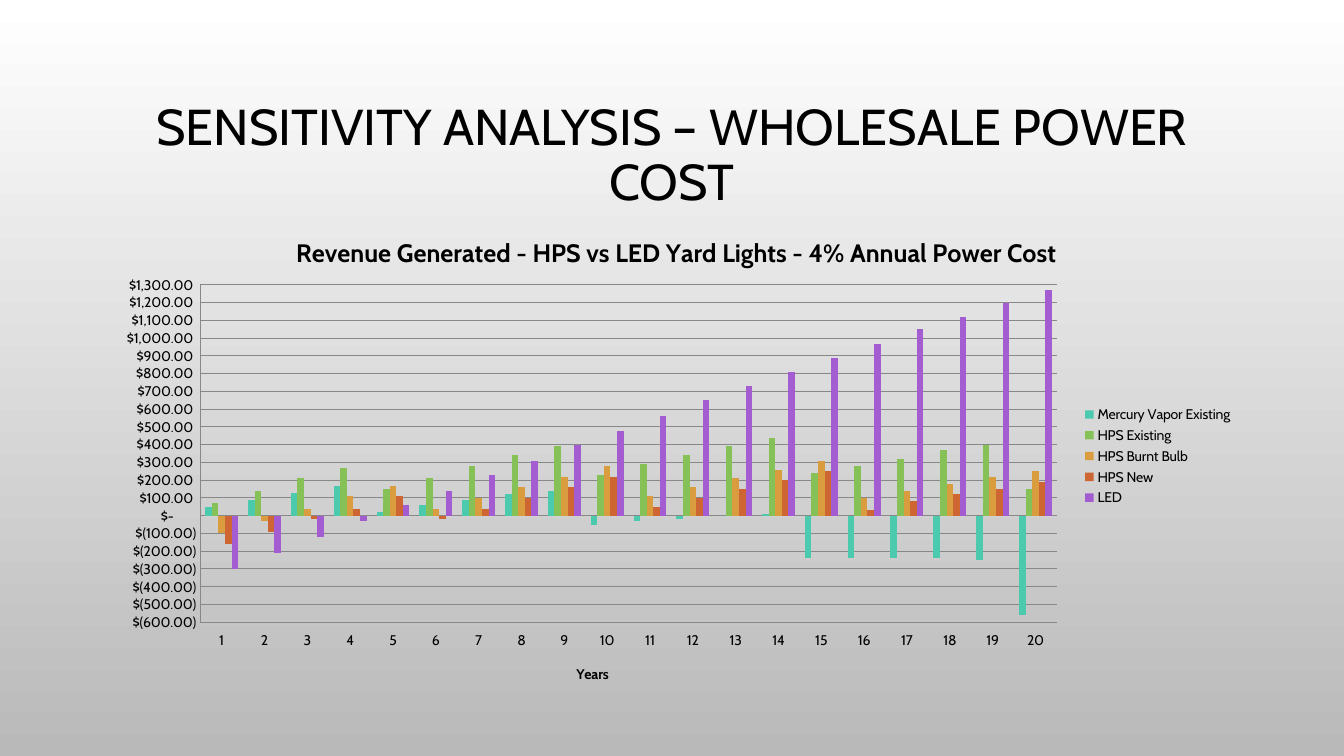
import pptx
import pptx.chart.data
import pptx.dml.color
import pptx.enum.chart
import pptx.enum.text
import pptx.oxml
import pptx.oxml.ns
import pptx.util

HEADING = "SENSITIVITY ANALYSIS – WHOLESALE POWER COST"
CHART_TITLE = "Revenue Generated - HPS vs LED Yard Lights - 4% Annual Power Cost"
YEARS_TITLE = "Years"
YEARS = [str(year) for year in range(1, 21)]
REVENUE = {
    "Mercury Vapor Existing": [50, 90, 130, 170, 20, 60, 90, 120, 140, -50,
                               -30, -20, 0, 10, -240, -240, -240, -240, -250, -560],
    "HPS Existing": [70, 140, 210, 270, 150, 210, 280, 340, 390, 230,
                     290, 340, 390, 440, 240, 280, 320, 370, 400, 150],
    "HPS Burnt Bulb": [-100, -30, 40, 110, 170, 40, 100, 160, 220, 280,
                       110, 160, 210, 260, 310, 100, 140, 180, 220, 250],
    "HPS New": [-160, -90, -20, 40, 110, -20, 40, 100, 160, 220,
                50, 100, 150, 200, 250, 30, 80, 120, 150, 190],
    "LED": [-300, -210, -120, -30, 60, 140, 230, 310, 400, 480,
            560, 650, 730, 810, 890, 970, 1050, 1120, 1200, 1270],
}
COLORS = {
    "Mercury Vapor Existing": "4BCAAD", "HPS Existing": "86C157",
    "HPS Burnt Bulb": "D99C3F", "HPS New": "CE6633", "LED": "A35DD1",
    "text": "000000", "line": "888888", "top": "FFFFFF", "bottom": "B9B9B9",
}
FONT = "Cabin"
DOLLARS = r'_("$"* #,##0.00_);_("$"* \(#,##0.00\);_("$"* "-"??_);_(@_)'
DOLLAR_SCALE = {"minimum_scale": -600, "maximum_scale": 1300, "major_unit": 100}

WIDTH, HEIGHT = 13.33, 7.5
MARGIN = 1
HEADING_TOP, HEADING_HEIGHT = 0.68, 1.75
CHART_TOP, CHART_HEIGHT = 2.1, 4.85
# Shares of the chart's size
PLOT_AREA = {"x": 0.087, "y": 0.15, "w": 0.75, "h": 0.69}
CHART_TITLE_PLACE = {"x": 0.167, "y": 0.04}
YEARS_TITLE_PLACE = {"x": 0.414, "y": 0.92}


def rgb(name):
    return pptx.dml.color.RGBColor.from_string(COLORS[name])


def style_font(font, size, bold=False):
    for key, value in {"name": FONT, "size": pptx.util.Pt(size), "bold": bold}.items():
        setattr(font, key, value)
    font.color.rgb = rgb("text")


def style_line(line):
    line.color.rgb = rgb("line")
    line.width = pptx.util.Pt(0.75)


def band(top, height):
    """Left, top, width and height of a box between the side margins."""
    return [pptx.util.Inches(n) for n in (MARGIN, top, WIDTH - 2 * MARGIN, height)]


def place(element, shares, inner=False):
    """Give a chart part a manual layout, in shares of the chart."""
    for old in element.findall(pptx.oxml.ns.qn("c:layout")):
        element.remove(old)
    target = '<c:layoutTarget val="inner"/>' if inner else ""
    modes = "".join(f'<c:{axis}Mode val="edge"/>' for axis in "xy")
    values = "".join(f'<c:{key} val="{share}"/>' for key, share in shares.items())
    layout = pptx.oxml.parse_xml(
        f'<c:layout {pptx.oxml.ns.nsdecls("c")}><c:manualLayout>'
        f"{target}{modes}{values}</c:manualLayout></c:layout>")
    text = element.find(pptx.oxml.ns.qn("c:tx"))
    if text is None:
        element.insert(0, layout)
    else:
        text.addnext(layout)


def add_title(title, words, size, shares):
    title.text_frame.text = words
    style_font(title.text_frame.paragraphs[0].runs[0].font, size, bold=True)
    place(title.element, shares)


def paint_background(slide):
    fill = slide.background.fill
    fill.gradient()
    fill.gradient_angle = 270
    for stop, name in zip(fill.gradient_stops, ("top", "bottom")):
        stop.color.rgb = rgb(name)


def add_heading(slide):
    frame = slide.shapes.add_textbox(*band(HEADING_TOP, HEADING_HEIGHT)).text_frame
    frame.word_wrap = True
    frame.vertical_anchor = pptx.enum.text.MSO_ANCHOR.MIDDLE
    heading = frame.paragraphs[0]
    heading.text = HEADING
    heading.alignment = pptx.enum.text.PP_ALIGN.CENTER
    heading.line_spacing = 0.9
    style_font(heading.runs[0].font, 36)


def add_revenue_chart(slide):
    revenue = pptx.chart.data.CategoryChartData(number_format=DOLLARS)
    revenue.categories = YEARS
    for light, amounts in REVENUE.items():
        revenue.add_series(light, amounts)
    chart = slide.shapes.add_chart(
        pptx.enum.chart.XL_CHART_TYPE.COLUMN_CLUSTERED,
        *band(CHART_TOP, CHART_HEIGHT), revenue).chart
    style_font(chart.font, 10)
    add_title(chart.chart_title, CHART_TITLE, 18, CHART_TITLE_PLACE)
    place(chart.element.find(".//" + pptx.oxml.ns.qn("c:plotArea")), PLOT_AREA, inner=True)

    plot = chart.plots[0]
    plot.gap_width, plot.overlap, plot.vary_by_categories = 150, 0, False
    for light in plot.series:
        light.invert_if_negative = False
        light.format.fill.solid()
        light.format.fill.fore_color.rgb = rgb(light.name)

    years, dollars = chart.category_axis, chart.value_axis
    for axis in (years, dollars):
        axis.major_tick_mark = axis.minor_tick_mark = pptx.enum.chart.XL_TICK_MARK.NONE
        style_line(axis.format.line)
        style_font(axis.tick_labels.font, 10)
    years.tick_label_position = pptx.enum.chart.XL_TICK_LABEL_POSITION.LOW
    add_title(years.axis_title, YEARS_TITLE, 10, YEARS_TITLE_PLACE)
    for key, value in DOLLAR_SCALE.items():
        setattr(dollars, key, value)
    dollars.tick_labels.number_format = DOLLARS
    dollars.tick_labels.number_format_is_linked = False
    style_line(dollars.major_gridlines.format.line)

    chart.has_legend = True
    chart.legend.position = pptx.enum.chart.XL_LEGEND_POSITION.RIGHT
    chart.legend.include_in_layout = False
    style_font(chart.legend.font, 10)


def main():
    deck = pptx.Presentation()
    deck.slide_width, deck.slide_height = pptx.util.Inches(WIDTH), pptx.util.Inches(HEIGHT)
    slide = deck.slides.add_slide(deck.slide_layouts[6])
    paint_background(slide)
    add_heading(slide)
    add_revenue_chart(slide)
    deck.save("out.pptx")


if __name__ == "__main__":
    main()
